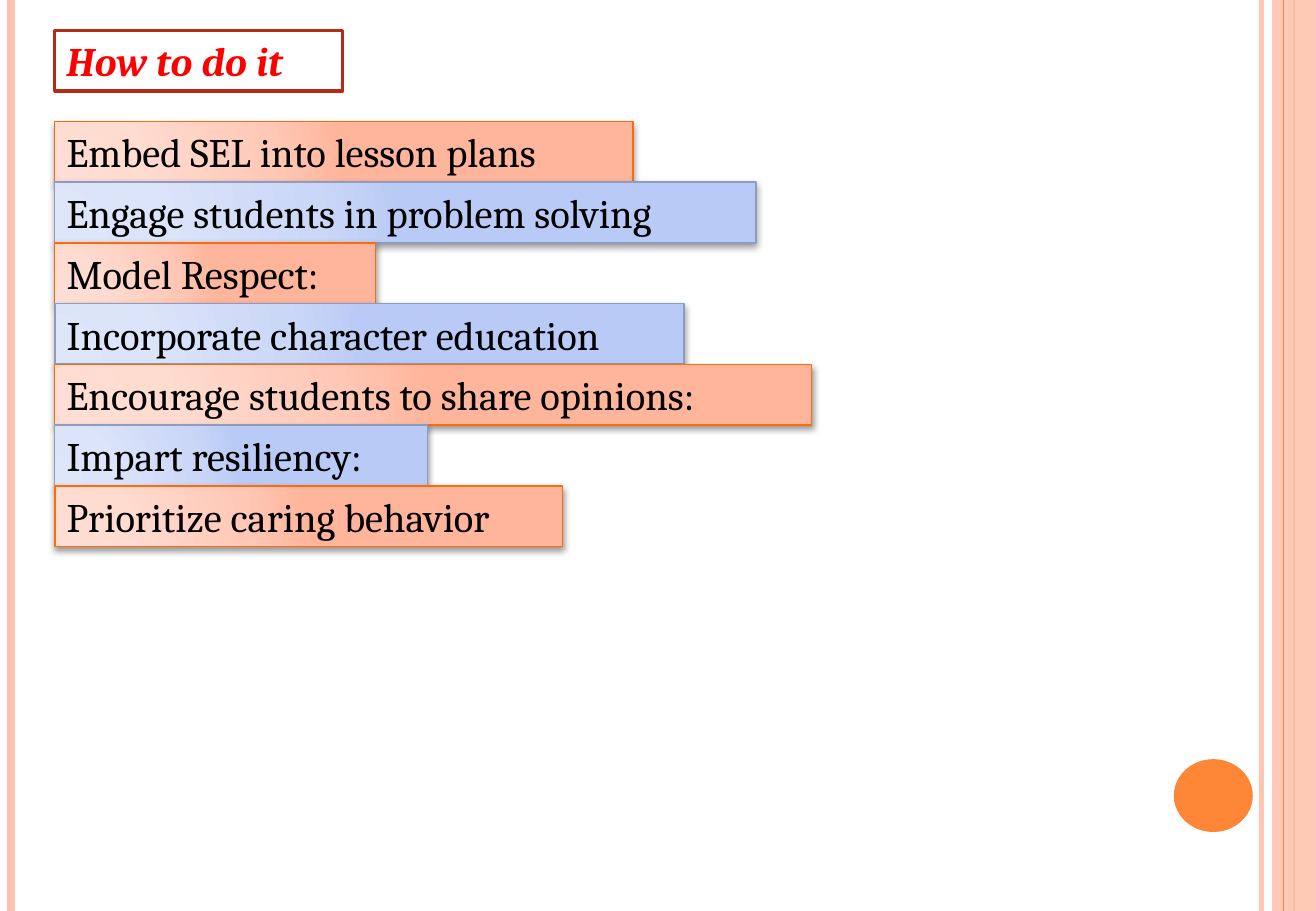
from lxml.etree import SubElement as Sub
from pptx import Presentation
from pptx.dml.color import RGBColor as Rgb
from pptx.enum.shapes import MSO_CONNECTOR as Link, MSO_SHAPE as Form
from pptx.enum.text import MSO_AUTO_SIZE as Auto
from pptx.oxml.ns import qn
from pptx.util import Pt

PX = 9144  # one px is 0.01 inch
WIDE, HIGH = 1083, 750
LEFT, ROW = 45, 50
PEACH, ORANGE = "FEC3AE", "FE8637"

# Gradient colours at each stop, then the border
STOPS = (0, 30, 75, 100)
WARM = (("FFDED5", "FFDBD0", "FFC8B6", "FFB59B"), "FF6B0A")
COOL = (("DEE6FA", "DBE4F9", "CAD7F7", "B8CAF5"), "8D9CBF")

STEPS = (
    ("Embed SEL into lesson plans", 476),
    ("Engage students in problem solving", 577),
    ("Model Respect:", 264),
    ("Incorporate character education", 518),
    ("Encourage students to share opinions:", 623),
    ("Impart resiliency:", 307),
    ("Prioritize caring behavior", 418),
)


def px(*nums):
    return [n * PX for n in nums]


def tint(color, code):
    color.rgb = Rgb.from_string(code)


def paint(fill, code):
    fill.solid()
    tint(fill.fore_color, code)


def fade(part, rate):
    """Set the opacity, in percent, of the solid fill inside part."""
    hue = next(part.iter(qn("a:srgbClr")))
    Sub(hue, qn("a:alpha"), val=str(rate * 1000))


def rule(slide, x, code, size, rate=100):
    """Draw an upright line over the full height."""
    line = slide.shapes.add_connector(Link.STRAIGHT, *px(x, 0, x, HIGH))
    tint(line.line.color, code)
    line.line.width = Pt(size)
    props = line._element.spPr
    Sub(props, qn("a:effectLst"))
    if rate < 100:
        fade(props, rate)


def plain(slide, form, spot, code):
    """Draw a filled shape with no border."""
    shape = slide.shapes.add_shape(form, *px(*spot))
    shape.shadow.inherit = False
    paint(shape.fill, code)
    shape.line.fill.background()
    return shape


def label(slide, text, top, width, edge, size, code="000000", strong=None):
    """Draw a bordered box around one line of text."""
    box = slide.shapes.add_textbox(*px(LEFT, top, width, ROW))
    tint(box.line.color, edge)
    box.line.width = Pt(size)
    frame = box.text_frame
    frame.word_wrap = False
    frame.auto_size = Auto.SHAPE_TO_FIT_TEXT
    run = frame.paragraphs[0].add_run()
    run.text = text
    font = run.font
    font.name, font.size = "Cambria", Pt(24)
    font.bold = font.italic = strong
    tint(font.color, code)
    return box


def blend(box, codes):
    """Fill the box with a round gradient."""
    box.fill.gradient()
    grad = box._element.spPr.find(qn("a:gradFill"))
    for part in list(grad):
        grad.remove(part)
    stops = Sub(grad, qn("a:gsLst"))
    for at, code in zip(STOPS, codes):
        stop = Sub(stops, qn("a:gs"), pos=str(at * 1000))
        Sub(stop, qn("a:srgbClr"), val=code)
    way = Sub(grad, qn("a:path"), path="circle")
    Sub(way, qn("a:fillToRect"), l="5000", t="100000", r="120000", b="10000")


def shade(box):
    """Cast a soft shadow straight down."""
    list_ = Sub(box._element.spPr, qn("a:effectLst"))
    cast = Sub(list_, qn("a:outerShdw"), blurRad=str(Pt(4)), dist=str(Pt(2)),
               dir="5400000", rotWithShape="0")
    hue = Sub(cast, qn("a:srgbClr"), val="000000")
    Sub(hue, qn("a:alpha"), val="40000")


def main():
    deck = Presentation()
    deck.slide_width, deck.slide_height = px(WIDE, HIGH)
    slide = deck.slides.add_slide(deck.slide_layouts[6])

    # Side bands and dot
    rule(slide, 1038, PEACH, 3, 93)
    rule(slide, 9, PEACH, 4.5)
    rule(slide, 1065, ORANGE, 1.5)
    band = plain(slide, Form.RECTANGLE, (1047, 0, 36, HIGH), PEACH)
    fade(band._element.spPr, 87)
    rule(slide, 1056, ORANGE, 0.75)
    plain(slide, Form.OVAL, (966, 625, 65, 60), ORANGE)

    # Title
    title = label(slide, "How to do it", 25, 237, "B32C16", 2, "FF0000", True)
    paint(title.fill, "FFFFFF")

    # Steps, warm and cool in turn
    for i, (text, width) in enumerate(STEPS):
        codes, edge = (WARM, COOL)[i % 2]
        box = label(slide, text, 100 + i * ROW, width, edge, 1)
        blend(box, codes)
        shade(box)

    deck.save("out.pptx")


if __name__ == "__main__":
    main()
